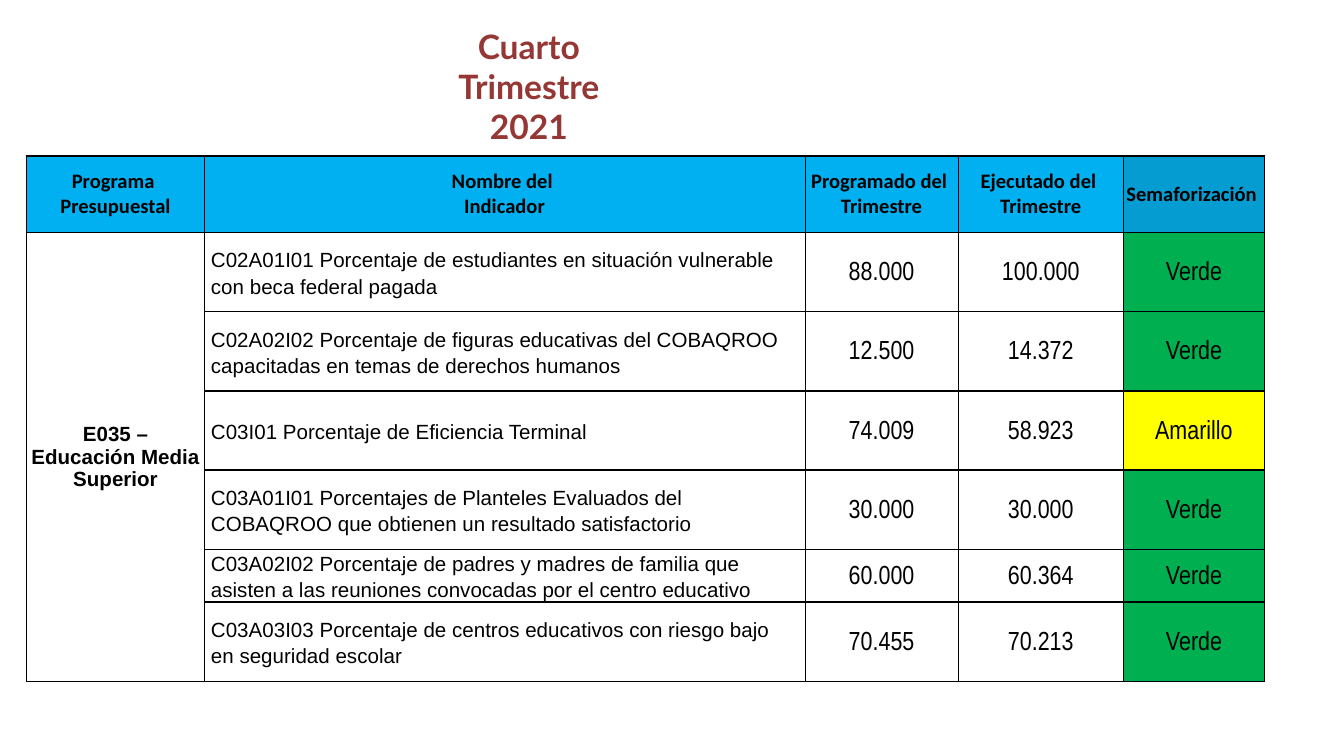
"""Build the quarterly indicator table slide."""
from lxml import etree
from pptx import Presentation
from pptx.dml.color import RGBColor
from pptx.enum.text import MSO_ANCHOR, MSO_AUTO_SIZE, PP_ALIGN
from pptx.oxml.ns import qn
from pptx.util import Inches, Pt

CENTER, LEFT = PP_ALIGN.CENTER, PP_ALIGN.LEFT
MIDDLE = MSO_ANCHOR.MIDDLE
FIT_SHAPE = MSO_AUTO_SIZE.SHAPE_TO_FIT_TEXT

TITLE = "Cuarto Trimestre 2021"
PROGRAM = "E035 – Educación Media Superior"
HEADERS = [
    ("Programa \nPresupuestal", "00B0F0"),
    ("Nombre del \nIndicador", "00B0F0"),
    ("Programado del \nTrimestre", "00B0F0"),
    ("Ejecutado del \nTrimestre", "00B0F0"),
    ("Semaforización ", "059CD1"),
]
INDICATORS = [
    ("C02A01I01 Porcentaje de estudiantes en situación vulnerable con beca federal pagada",
     "88.000", "100.000", "Verde"),
    ("C02A02I02 Porcentaje de figuras educativas del COBAQROO capacitadas en temas de "
     "derechos humanos", "12.500", "14.372", "Verde"),
    ("C03I01 Porcentaje de Eficiencia Terminal", "74.009", "58.923", "Amarillo"),
    ("C03A01I01 Porcentajes de Planteles Evaluados del COBAQROO que obtienen un resultado "
     "satisfactorio", "30.000", "30.000", "Verde"),
    ("C03A02I02 Porcentaje de padres y madres de familia que asisten a las reuniones "
     "convocadas por el centro educativo", "60.000", "60.364", "Verde"),
    ("C03A03I03 Porcentaje de centros educativos con riesgo bajo en seguridad escolar",
     "70.455", "70.213", "Verde"),
]
STATUS_COLORS = {"Verde": "00B050", "Amarillo": "FFFF00"}
SLIDE_WIDTH = 10
TABLE_HEIGHT = 3.93
COLUMN_WIDTHS = [1.32, 4.47, 1.14, 1.23, 1.05]
ROW_HEIGHTS = [0.57, 0.59, 0.59, 0.59, 0.59, 0.06, 0.59]
HEAVY_LINES = {0, 3, 4, 6}


def color(value):
    """Turn a hex string into a colour."""
    return RGBColor.from_string(value)


def write(frame, text, size=11, font="Arial", bold=False, ink="000000",
          align=CENTER, spacing=None):
    """Write one paragraph per line of text with the given format."""
    frame.word_wrap = True
    for index, line in enumerate(text.split("\n")):
        paragraph = frame.add_paragraph() if index else frame.paragraphs[0]
        paragraph.alignment = align
        if spacing:
            paragraph.line_spacing = spacing
        run = paragraph.add_run()
        run.text = line
        run.font.size = Pt(size)
        run.font.name = font
        run.font.bold = bold
        run.font.color.rgb = color(ink)


def set_borders(cell, top, bottom):
    """Draw black lines around a cell, with top and bottom widths in points."""
    properties = cell._tc.get_or_add_tcPr()
    for side, width in (("L", 0.5), ("R", 0.5), ("T", top), ("B", bottom)):
        line = etree.SubElement(properties, qn(f"a:ln{side}"), w=str(Pt(width)))
        fill = etree.SubElement(line, qn("a:solidFill"))
        etree.SubElement(fill, qn("a:srgbClr"), val="000000")


def fill_cell(cell, text, fill=None, side_margin=0.0, **text_format):
    """Set the fill, margins and text of a cell."""
    if fill:
        cell.fill.solid()
        cell.fill.fore_color.rgb = color(fill)
    cell.vertical_anchor = MIDDLE
    cell.margin_left = cell.margin_right = Inches(side_margin)
    cell.margin_top = cell.margin_bottom = 0
    write(cell.text_frame, text, **text_format)


def add_indicator_table(slide):
    """Add the table of indicators."""
    shape = slide.shapes.add_table(
        len(ROW_HEIGHTS), len(COLUMN_WIDTHS), Inches(0.2), Inches(1.16),
        Inches(sum(COLUMN_WIDTHS)), Inches(TABLE_HEIGHT))
    table = shape.table
    table.first_row = table.horz_banding = False
    for column, width in zip(table.columns, COLUMN_WIDTHS):
        column.width = Inches(width)
    for number, (row, height) in enumerate(zip(table.rows, ROW_HEIGHTS)):
        row.height = Inches(height)
        top, bottom = (1 if line in HEAVY_LINES else 0.5 for line in (number, number + 1))
        for column, cell in enumerate(row.cells):
            inside_program = column == 0 and number > 0
            set_borders(cell, 0.5 if inside_program else top,
                        0.5 if inside_program else bottom)
            cell.fill.background()
    shape.height = Inches(TABLE_HEIGHT)

    for column, (text, fill) in enumerate(HEADERS):
        fill_cell(table.cell(0, column), text, fill, font="Calibri", bold=True)
    program_cell = table.cell(1, 0)
    program_cell.merge(table.cell(len(INDICATORS), 0))
    fill_cell(program_cell, PROGRAM, side_margin=0.01, bold=True)
    for row, (name, *values) in enumerate(INDICATORS, start=1):
        fill_cell(table.cell(row, 1), name, side_margin=0.05, align=LEFT, spacing=1.15)
        for column, value in enumerate(values, start=2):
            fill_cell(table.cell(row, column), value, STATUS_COLORS.get(value),
                      side_margin=0.05, size=14, font="Arial Narrow", spacing=1.15)


def main():
    """Build and save the presentation."""
    presentation = Presentation()
    presentation.slide_width = Inches(SLIDE_WIDTH)
    presentation.slide_height = Inches(SLIDE_WIDTH * 9 / 16)
    slide = presentation.slides.add_slide(presentation.slide_layouts[6])
    add_indicator_table(slide)
    title = slide.shapes.add_textbox(Inches(3.11), Inches(0.14), Inches(1.65), Inches(1.01))
    title.text_frame.auto_size = FIT_SHAPE
    write(title.text_frame, TITLE, size=18, font="Lato", bold=True, ink="953735")
    presentation.save("out.pptx")


if __name__ == "__main__":
    main()
